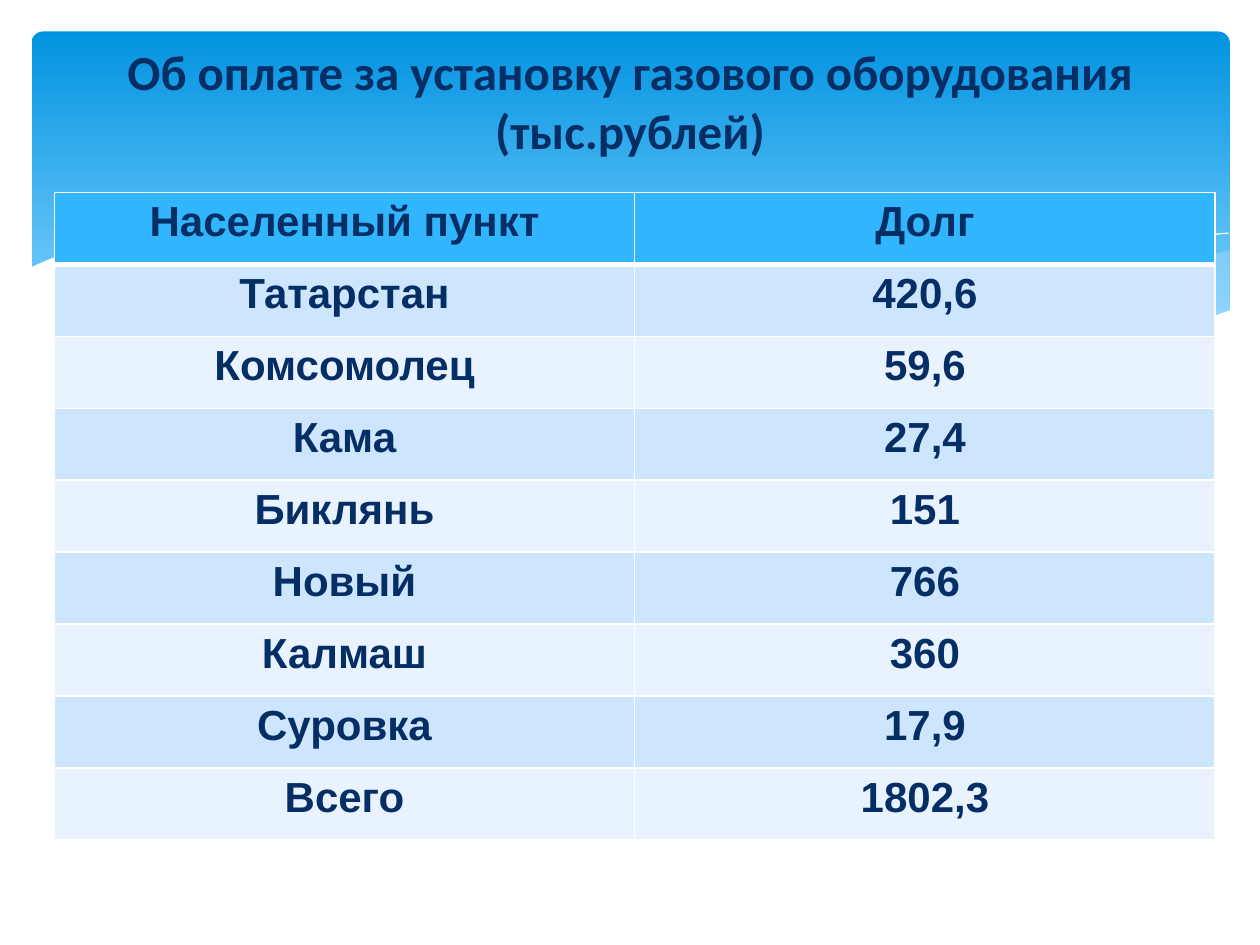
from pptx import Presentation
from pptx.dml.color import RGBColor
from pptx.enum.shapes import MSO_SHAPE as Shape
from pptx.enum.text import MSO_ANCHOR as Anchor, PP_ALIGN as Align
from pptx.oxml.ns import qn
from pptx.util import Pt
from lxml.etree import SubElement

COLORS = {
    "sky_top": "0293E0", "sky_bottom": "83D3FE", "mist": "C6E7FC",
    "white": "FFFFFF", "navy": "052E65", "header": "31B6FD",
    "band_dark": "CEE5FE", "band_light": "E8F3FF",
}

DEBTS = [
    ("Населенный пункт", "Долг"),
    ("Татарстан", "420,6"),
    ("Комсомолец", "59,6"),
    ("Кама", "27,4"),
    ("Биклянь", "151"),
    ("Новый", "766"),
    ("Калмаш", "360"),
    ("Суровка", "17,9"),
    ("Всего", "1802,3"),
]

RIGHT_WAVE = [
    (702, 143.3), (672, 150), (641.5, 155.5), (620, 160.6), (580, 169),
    (542, 178.6), (508, 185), (476, 190.8), (517, 195.8), (554, 198.7),
    (586, 200), (615, 199.4), (640, 197.3), (662, 193.7), (683, 188),
    (702.7, 177.8), (702.7, 143.3),
]
MIDDLE_WAVE = [
    (643, 196.6), (603, 190.8), (558, 182.9), (508, 172.8), (453, 159.8),
    (420, 152), (390, 146), (361, 141), (335, 137.5), (302, 134),
    (274, 133.9), (248, 133.9), (206, 137.5), (246, 143), (291, 152),
    (323, 160), (382, 173), (433, 183.6), (479, 191.5), (520, 197),
    (556, 199.4), (589, 200.2), (624, 198.7),
]
FALLING_CREST = [
    (222.5, 140.4), (247.7, 136.8), (278, 134.6), (312, 134.6), (352, 136.8),
    (400, 141.8), (458, 150), (523, 162.7), (598, 180.7), (653, 195.8),
]
RISING_CREST = [
    (441.4, 185), (483.8, 173.5), (538.6, 160.6), (602, 146.9),
    (644.4, 139.7), (675.4, 135.4), (702, 133.2),
]
WHITE_WAVE = [
    (703.4, 177.1), (677, 186.5), (647, 193.7), (612, 198), (571, 199.4),
    (523, 197.3), (466, 190.8), (400, 180), (322, 158.4), (263, 145.4),
    (210, 137.5), (166, 133.2), (127, 132.5), (95, 133.9), (68, 137.5),
    (48, 141.8), (33, 146.2), (21, 151.2), (16.6, 153.4), (16.6, 236.9),
    (703.4, 236.9),
]


def rgb(name):
    return RGBColor.from_string(COLORS[name])


def write(frame, text, size, font, color="navy", bold=True, align=Align.CENTER):
    paragraph = frame.paragraphs[0]
    paragraph.alignment = align
    run = paragraph.add_run()
    run.text = text
    run.font.size = Pt(size)
    run.font.name = font
    run.font.bold = bold
    run.font.color.rgb = rgb(color)


def add_wave(slide, points, fill=None, opacity=100, line=None):
    start, *rest = [(Pt(x), Pt(y)) for x, y in points]
    builder = slide.shapes.build_freeform(*start, scale=1.0)
    builder.add_line_segments(rest, close=fill is not None)
    wave = builder.convert_to_shape()
    wave.shadow.inherit = False
    if fill:
        wave.fill.solid()
        wave.fill.fore_color.rgb = rgb(fill)
        if opacity < 100:
            tint = next(wave.element.spPr.iter(qn("a:srgbClr")))
            SubElement(tint, qn("a:alpha"), val=str(opacity * 1000))
    else:
        wave.fill.background()
    if line:
        wave.line.color.rgb = rgb(line)
        wave.line.width = Pt(0)
    else:
        wave.line.fill.background()


def add_banner(slide, left, top, width, height):
    sky = slide.shapes.add_shape(
        Shape.ROUNDED_RECTANGLE, Pt(left), Pt(top), Pt(width), Pt(height))
    sky.adjustments[0] = 0.034
    sky.shadow.inherit = False
    sky.line.fill.background()
    sky.fill.gradient()
    sky.fill.gradient_angle = 270
    stops = zip(sky.fill.gradient_stops, ("sky_top", "sky_bottom"), (0, 0.9))
    for stop, color, position in stops:
        stop.color.rgb = rgb(color)
        stop.position = position
    add_wave(slide, RIGHT_WAVE, fill="mist", opacity=29)
    add_wave(slide, MIDDLE_WAVE, fill="mist", opacity=40)
    add_wave(slide, FALLING_CREST, line="white")
    add_wave(slide, RISING_CREST, line="white")
    add_wave(slide, WHITE_WAVE, fill="white")


def add_title(slide, left, top, width, height):
    title = slide.shapes.add_textbox(Pt(left), Pt(top), Pt(width), Pt(height))
    title.text_frame.word_wrap = True
    title.text_frame.vertical_anchor = Anchor.MIDDLE
    write(title.text_frame,
          "Об оплате за установку газового оборудования (тыс.рублей)",
          size=28, font="Calibri")


def set_borders(cell, **widths):
    properties = cell._tc.get_or_add_tcPr()
    for side in "LRTB":
        border = SubElement(properties, qn(f"a:ln{side}"),
                            w=str(Pt(widths.get(side, 1))))
        paint = SubElement(border, qn("a:solidFill"))
        SubElement(paint, qn("a:srgbClr"), val=COLORS["white"])


def add_debt_table(slide, left, top, width, height):
    table = slide.shapes.add_table(
        len(DEBTS), len(DEBTS[0]), Pt(left), Pt(top), Pt(width), Pt(height)).table
    table.horz_banding = False
    for row, entry in enumerate(DEBTS):
        band = "band_dark" if row % 2 else "band_light"
        for column, text in enumerate(entry):
            cell = table.cell(row, column)
            set_borders(cell, T=3 if row == 1 else 1, B=3 if row == 0 else 1)
            cell.fill.solid()
            cell.fill.fore_color.rgb = rgb(band if row else "header")
            write(cell.text_frame, text, size=24, font="Arial")


def main():
    deck = Presentation()
    deck.slide_width, deck.slide_height = Pt(720), Pt(540)
    slide = deck.slides.add_slide(deck.slide_layouts[6])
    add_banner(slide, 18, 18, 684.7, 194.4)
    add_title(slide, 36, 26.6, 648, 61.9)
    add_debt_table(slide, 31, 110, 663.4, 370)
    deck.save("out.pptx")


if __name__ == "__main__":
    main()
